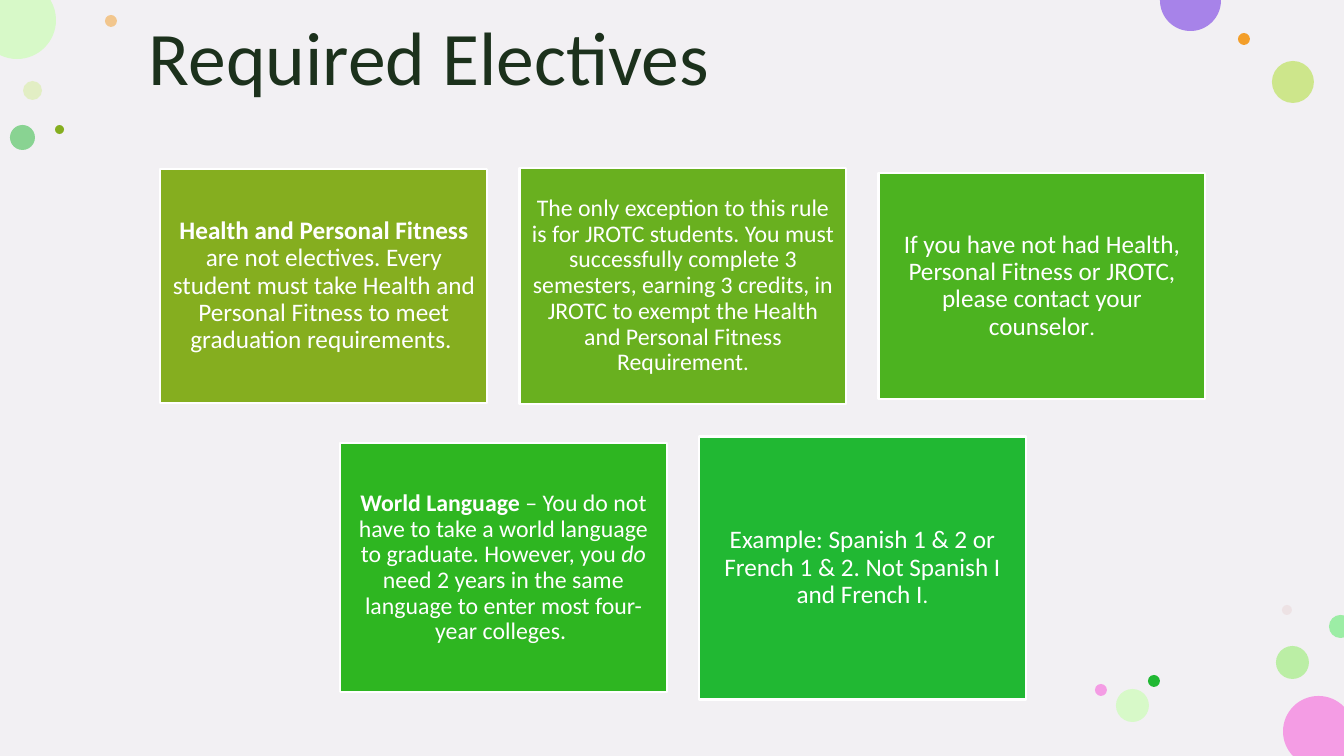
import math
from dataclasses import dataclass

from lxml import etree
from pptx import Presentation
from pptx.dml.color import RGBColor
from pptx.enum.shapes import MSO_SHAPE
from pptx.enum.text import MSO_ANCHOR, PP_ALIGN
from pptx.oxml.ns import qn
from pptx.util import Emu, Pt

ELLIPSE, RECTANGLE = MSO_SHAPE.OVAL, MSO_SHAPE.RECTANGLE
MIDDLE, CENTER = MSO_ANCHOR.MIDDLE, PP_ALIGN.CENTER
PAGE_WIDTH, PAGE_HEIGHT = 1344, 756
EMU_PER_PX = 12192000 / PAGE_WIDTH


@dataclass(frozen=True)
class Theme:
    font: str = "Calibri"
    background: str = "F2F0F3"
    title: str = "1C311C"
    white: str = "FFFFFF"
    title_size: int = 54
    large: int = 18
    medium: int = 17
    stop: int = 16
    line_spacing: float = 0.9


theme = Theme()


def px(length):
    return Emu(round(length * EMU_PER_PX))


def paint(shape, color, opacity=100):
    shape.shadow.inherit = False
    shape.line.fill.background()
    shape.fill.solid()
    shape.fill.fore_color.rgb = RGBColor.from_string(color)
    if opacity < 100:
        tint = shape.fill._xPr.find(qn("a:solidFill"))[0]
        etree.SubElement(tint, qn("a:alpha")).set("val", str(opacity * 1000))


deck = Presentation()
deck.slide_width, deck.slide_height = px(PAGE_WIDTH), px(PAGE_HEIGHT)
page = deck.slides.add_slide(deck.slide_layouts[6])
backdrop = page.shapes.add_shape(RECTANGLE, 0, 0, px(PAGE_WIDTH), px(PAGE_HEIGHT))
paint(backdrop, theme.background)

bubbles = [
    (23, 81, 19, "D4ED97", 50),
    (105, 15, 12, "F39E29", 50),
    (1276, 646, 33, "86ED59", 50),
    (10, 125, 25, "21B833", 50),
    (1272, 61, 42, "BFE364", 72),
    (1238, 33, 12, "F39E29", 100),
    (1282, 605, 10, "E3BEBE", 28),
    (1148, 675, 12, "21B833", 100),
    (1116, 689, 33, "D7F9C8", 100),
    (1095, 684, 12, "F49CE4", 100),
    (55, 125, 9, "85AE1F", 100),
]
for left, top, size, color, opacity in bubbles:
    bubble = page.shapes.add_shape(ELLIPSE, px(left), px(top), px(size), px(size))
    paint(bubble, color, opacity)

edge_bubbles = [
    (1283, 696, 71, "F49CE4", [136, 180, 270, 316], [(PAGE_WIDTH, PAGE_HEIGHT)]),
    (-22, -19, 78, "D7F9C8", [-31, 0, 90, 116], [(0, 0)]),
    (1160, -30, 61, "A783E9", [-1, 0, 90, 180, 181], []),
    (1329, 615, 23, "9CEDA5", [72, 90, 180, 270, 288], []),
]
for left, top, size, color, degrees, corners in edge_bubbles:
    radius = size / 2
    angles = [math.radians(degree) for degree in degrees]
    anchors = [
        (min(max(left + radius + radius * math.cos(angle), 0), PAGE_WIDTH),
         min(max(top + radius + radius * math.sin(angle), 0), PAGE_HEIGHT))
        for angle in angles
    ]
    outline = [(px(x), px(y)) for x, y in anchors + corners]
    builder = page.shapes.build_freeform(*outline[0])
    builder.add_line_segments(outline[1:], close=True)
    bubble = builder.convert_to_shape()
    paint(bubble, color)
    segments = list(bubble._element.iter(qn("a:lnTo")))
    for index, segment in enumerate(segments[:len(angles) - 1]):
        start, end = angles[index], angles[index + 1]
        reach = radius * 4 / 3 * math.tan((end - start) / 4)
        (start_x, start_y), (end_x, end_y) = anchors[index], anchors[index + 1]
        controls = [
            (start_x - reach * math.sin(start), start_y + reach * math.cos(start)),
            (end_x + reach * math.sin(end), end_y - reach * math.cos(end)),
        ]
        curve = etree.Element(qn("a:cubicBezTo"))
        for x, y in controls:
            point = etree.SubElement(curve, qn("a:pt"))
            point.set("x", str(px(x) - bubble.left))
            point.set("y", str(px(y) - bubble.top))
        curve.append(segment[0])
        segment.getparent().replace(segment, curve)

title = page.shapes.add_textbox(px(139), px(12), px(1087), px(99))
title.text_frame.word_wrap = True
title.text_frame.vertical_anchor = MIDDLE
para = title.text_frame.paragraphs[0]
para.text = "Required Electives"
para.line_spacing = theme.line_spacing
para.font.name = theme.font
para.font.size = Pt(theme.title_size)
para.font.color.rgb = RGBColor.from_string(theme.title)

card_rows = [
    (286, [
        (234, "85AE1F", theme.large, [
            ("Health and Personal Fitness ", "bold"),
            ("are not electives. Every student must take Health and Personal Fitness "
             "to meet graduation requirements. ", ""),
        ]),
        (236, "69B01F", theme.medium, [
            ("The only exception to this rule is for JROTC students. You must successfully "
             "complete 3 semesters, earning 3 credits, in JROTC to exempt the Health and "
             "Personal Fitness Requirement", ""),
            (".", "stop"),
        ]),
        (226, "4CB320", theme.large, [
            ("If you have not had Health, Personal Fitness or JROTC, "
             "please contact your counselor", ""),
            (".", "stop"),
        ]),
    ]),
    (568, [
        (249, "2EB621", theme.medium, [
            ("World Language ", "bold"),
            ("– You do not have to take a world language to graduate. However, you ", ""),
            ("do", "italic"),
            (" need 2 years in the same language to enter most four-year colleges. ", ""),
        ]),
        (263, "21B833", theme.large, [
            ("Example: Spanish 1 & 2 or French 1 & 2. Not Spanish I and French I", ""),
            (".", "stop"),
        ]),
    ]),
]
CARD_WIDTH, CARD_PITCH, CARDS_CENTER, INSET = 327, 359, 683, 10

for row_center, cards in card_rows:
    row_width = CARD_WIDTH + CARD_PITCH * (len(cards) - 1)
    row_left = CARDS_CENTER - row_width / 2
    for column, (height, color, size, pieces) in enumerate(cards):
        card = page.shapes.add_shape(
            RECTANGLE, px(row_left + column * CARD_PITCH), px(row_center - height / 2),
            px(CARD_WIDTH), px(height))
        paint(card, color)
        card.line.color.rgb = RGBColor.from_string(theme.white)
        card.line.width = Pt(1.5)
        frame = card.text_frame
        frame.word_wrap = True
        frame.vertical_anchor = MIDDLE
        frame.margin_left = frame.margin_right = px(INSET)
        frame.margin_top = frame.margin_bottom = px(INSET)
        para = frame.paragraphs[0]
        para.alignment = CENTER
        para.line_spacing = theme.line_spacing
        para.font.name = theme.font
        para.font.size = Pt(size)
        para.font.color.rgb = RGBColor.from_string(theme.white)
        for text, style in pieces:
            span = para.add_run()
            span.text = text
            if style == "bold":
                span.font.bold = True
            elif style == "italic":
                span.font.italic = True
            elif style == "stop":
                span.font.size = Pt(theme.stop)

deck.save("out.pptx")
